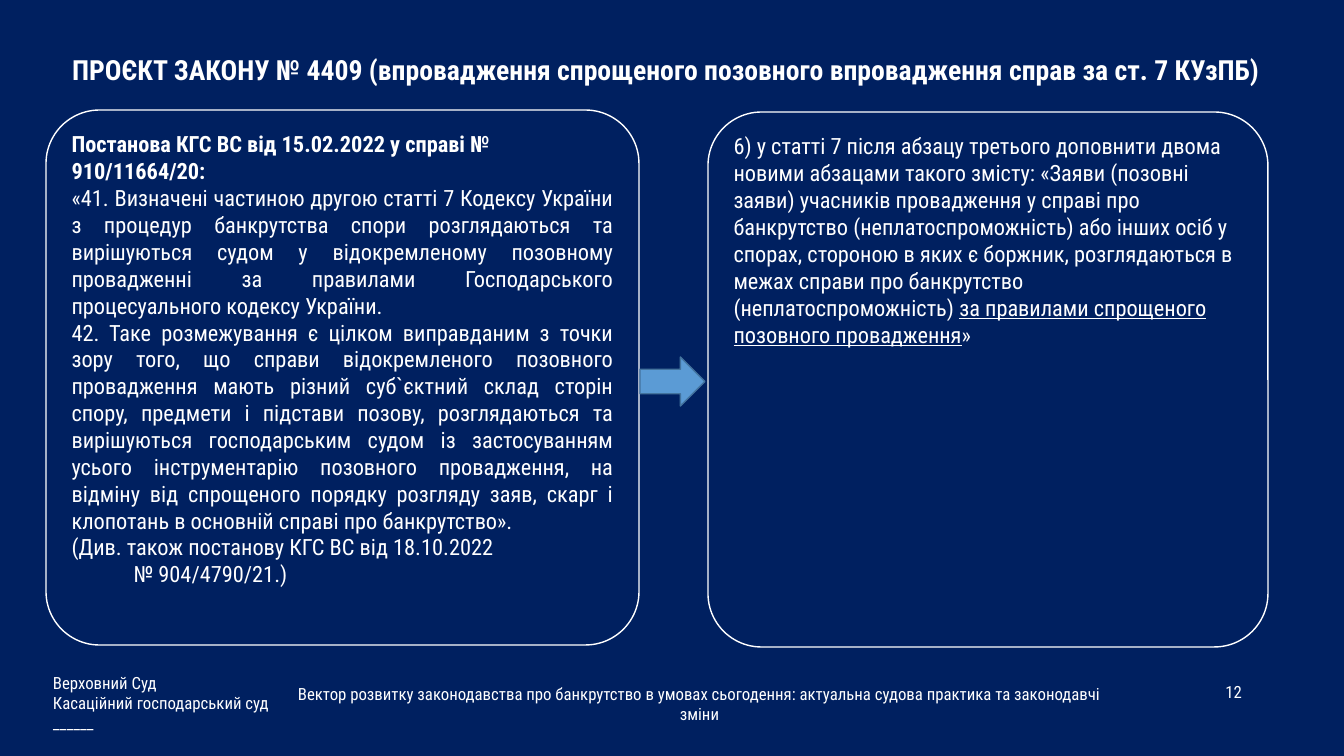
"""Build the slide on draft law № 4409 with two panels joined by an arrow."""
from pptx import Presentation
from pptx.dml.color import RGBColor
from pptx.enum.shapes import MSO_SHAPE
from pptx.enum.text import MSO_ANCHOR, MSO_AUTO_SIZE, PP_ALIGN
from pptx.util import Emu, Pt

NAVY = RGBColor(0x00, 0x20, 0x60)
WHITE = RGBColor(0xFF, 0xFF, 0xFF)
ARROW_BLUE = RGBColor(0x5B, 0x9B, 0xD5)
ARROW_EDGE = RGBColor(0x43, 0x73, 0x9E)
FONT = "Roboto Condensed"
TITLE_ONLY = 5

TITLE = "ПРОЄКТ ЗАКОНУ № 4409 (впровадження спрощеного позовного впровадження справ за ст. 7 КУзПБ)"
RULING = [
    ("Постанова КГС ВС від 15.02.2022 у справі № 910/11664/20:", {"bold": True}),
    ("«41. Визначені частиною другою статті 7 Кодексу України з процедур банкрутства спори "
     "розглядаються та вирішуються судом у відокремленому позовному провадженні за правилами "
     "Господарського процесуального кодексу України.", {"align": PP_ALIGN.JUSTIFY}),
    ("42. Таке розмежування є цілком виправданим з точки зору того, що справи відокремленого "
     "позовного провадження мають різний суб`єктний склад сторін спору, предмети і підстави "
     "позову, розглядаються та вирішуються господарським судом із застосуванням усього "
     "інструментарію позовного провадження, на відміну від спрощеного порядку розгляду заяв, "
     "скарг і клопотань в основній справі про банкрутство».", {"align": PP_ALIGN.JUSTIFY}),
    ("(Див. також постанову КГС ВС від 18.10.2022", {}),
    ("№ 904/4790/21.)", {"indent": 62}),
]
AMENDMENT = [
    ("6) у статті 7 після абзацу третього доповнити двома новими абзацами такого змісту: «Заяви "
     "(позовні заяви) учасників провадження у справі про банкрутство (неплатоспроможність) або "
     "інших осіб у спорах, стороною в яких є боржник, розглядаються в межах справи про "
     "банкрутство (неплатоспроможність) ", {}),
    ("за правилами спрощеного позовного провадження", {"underline": True, "joined": True}),
    ("»", {"joined": True}),
]
COURT = ["Верховний Суд", "Касаційний господарський суд", "______"]
TOPIC = ("Вектор розвитку законодавства про банкрутство в умовах сьогодення: "
         "актуальна судова практика та законодавчі зміни")


def px(length):
    """Turn pixels into EMU."""
    return Emu(round(length * 914400 / 100.8))


def write(frame, text, size=16, bold=False, underline=False, align=PP_ALIGN.LEFT,
          indent=0, joined=False):
    """Add text to a frame as a new paragraph, or joined to the last one."""
    para = frame.paragraphs[-1]
    if para.runs and not joined:
        para = frame.add_paragraph()
    if not joined:
        para.alignment = align
    if indent:
        para._p.get_or_add_pPr().set("marL", str(px(indent)))
    span = para.add_run()
    span.text = text
    span.font.name = FONT
    span.font.size = Pt(size)
    span.font.bold = bold
    span.font.underline = underline
    span.font.color.rgb = WHITE


def add_block(page, preset, box, fill, edge):
    """Add a filled and outlined preset shape."""
    block = page.shapes.add_shape(preset, *map(px, box))
    block.shadow.inherit = False
    block.fill.solid()
    block.fill.fore_color.rgb = fill
    block.line.color.rgb = edge
    block.line.width = Pt(1)
    return block


def add_title(page, box):
    """Place the title placeholder in its box."""
    title = page.shapes.title
    title.left, title.top, title.width, title.height = map(px, box)
    frame = title.text_frame
    frame.word_wrap = True
    frame.auto_size = MSO_AUTO_SIZE.NONE
    frame.vertical_anchor = MSO_ANCHOR.MIDDLE
    write(frame, TITLE, size=19.8, bold=True, align=PP_ALIGN.CENTER)


def add_panel(page, box, content):
    """Add a rounded panel filled with formatted text."""
    panel = add_block(page, MSO_SHAPE.ROUNDED_RECTANGLE, box, NAVY, WHITE)
    panel.adjustments[0] = 0.1
    frame = panel.text_frame
    frame.word_wrap = True
    frame.vertical_anchor = MSO_ANCHOR.TOP
    for text, look in content:
        write(frame, text, **look)


def add_note(page, box, lines, align):
    """Add a small text box with one paragraph per line."""
    frame = page.shapes.add_textbox(*map(px, box)).text_frame
    frame.word_wrap = True
    frame.vertical_anchor = MSO_ANCHOR.MIDDLE
    for line in lines:
        write(frame, line, size=12, align=align)


def add_footer(page, box):
    """Place the court name, topic and page number along the bottom."""
    left, top, width, height = box
    add_note(page, (left, top, 256, height), COURT, PP_ALIGN.LEFT)
    add_note(page, (left + 226, top + 14, 861, 49), [TOPIC], PP_ALIGN.CENTER)
    add_note(page, (left + width - 302, top + 10, 302, 33), ["12"], PP_ALIGN.RIGHT)


def main():
    """Build and save the deck."""
    deck = Presentation()
    deck.slide_width, deck.slide_height = px(1344), px(756)
    page = deck.slides.add_slide(deck.slide_layouts[TITLE_ONLY])
    page.background.fill.solid()
    page.background.fill.fore_color.rgb = NAVY
    add_title(page, (43, 42, 1245, 54))
    add_panel(page, (46, 110, 593, 535), RULING)
    add_panel(page, (708, 112, 560, 535), AMENDMENT)
    add_block(page, MSO_SHAPE.RIGHT_ARROW, (640, 357, 65, 49), ARROW_BLUE, ARROW_EDGE)
    add_footer(page, (43, 665, 1209, 76))
    deck.save("out.pptx")


if __name__ == "__main__":
    main()
